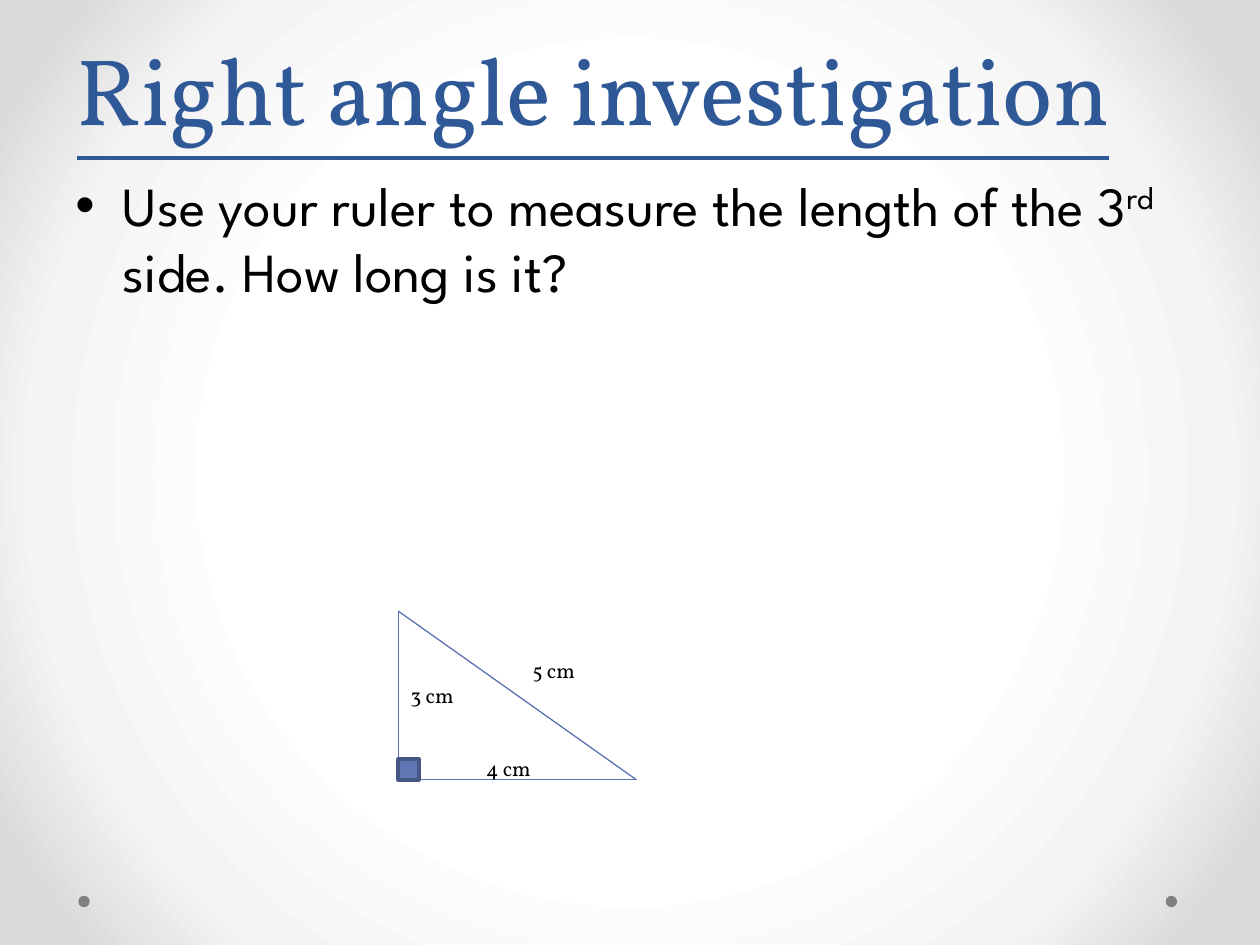
from dataclasses import dataclass

from lxml import etree
from pptx import Presentation
from pptx.dml.color import RGBColor
from pptx.enum.shapes import MSO_CONNECTOR as Connector, MSO_SHAPE as Shape
from pptx.enum.text import MSO_ANCHOR as Anchor
from pptx.oxml import parse_xml
from pptx.oxml.ns import nsdecls, qn
from pptx.util import Cm, Pt


@dataclass(frozen=True)
class Theme:
    title: RGBColor = RGBColor(0x2F, 0x58, 0x97)
    text: RGBColor = RGBColor(0, 0, 0)
    dot: RGBColor = RGBColor(0x80, 0x80, 0x80)
    side: RGBColor = RGBColor(0x5C, 0x72, 0xB2)
    corner: RGBColor = RGBColor(0x60, 0x76, 0xB4)
    corner_line: RGBColor = RGBColor(0x47, 0x57, 0x85)
    glow: tuple = ((50, "FFFFFF"), (76, "F4F4F4"), (92, "DADADA"))
    serif: str = "Vollkorn"
    sans: str = "League Spartan"
    title_size: Pt = Pt(54)
    body_size: Pt = Pt(31.5)
    label_size: Pt = Pt(12)


theme = Theme()


def add_text(page, place, spans, **font_format):
    """Add a one-paragraph text box and return its frame and paragraph."""
    frame = page.shapes.add_textbox(*map(Cm, place)).text_frame
    frame.word_wrap = True
    para = frame.paragraphs[0]
    for words in spans:
        span = para.add_run()
        span.text = words
        color = font_format.get("color", theme.text)
        span.font.color.rgb = color
        for name, value in font_format.items():
            if name != "color":
                setattr(span.font, name, value)
    return frame, para


def add_solid(page, kind, place, color):
    solid = page.shapes.add_shape(kind, *map(Cm, place))
    solid.shadow.inherit = False
    solid.fill.solid()
    solid.fill.fore_color.rgb = color
    solid.line.fill.background()
    return solid


deck = Presentation()
deck.slide_width, deck.slide_height = Cm(25.4), Cm(19.05)
page = deck.slides.add_slide(deck.slide_layouts[6])

# Background: circular glow from the centre
page.background.fill.solid()
solid_fill = page.background._cSld.bg.bgPr.find(qn("a:solidFill"))
stops = "".join(f'<a:gs pos="{at * 1000}"><a:srgbClr val="{color}"/></a:gs>'
                for at, color in theme.glow)
solid_fill.getparent().replace(solid_fill, parse_xml(
    f'<a:gradFill {nsdecls("a")} rotWithShape="1"><a:gsLst>{stops}</a:gsLst>'
    '<a:path path="circle"><a:fillToRect l="50000" t="50000" r="50000" b="50000"/>'
    '</a:path></a:gradFill>'))

# Footer dots
for left in (23.5, 1.58):
    add_solid(page, Shape.OVAL, (left, 18.06, 0.23, 0.23), theme.dot)

# Title
frame, para = add_text(page, (1.3, 0.53, 22.86, 2.51), ["Right angle investigation"],
                       name=theme.serif, size=theme.title_size,
                       color=theme.title, underline=True)
frame.vertical_anchor = Anchor.BOTTOM
para.line_spacing = Pt(58)

# Task
frame, para = add_text(page, (1.27, 3.33, 22.86, 6.2),
                       ["Use your ruler to measure the length of the 3", "rd",
                        " side. How long is it?"],
                       name=theme.sans, size=theme.body_size)
para.space_before = Pt(6.3)
para.runs[1].font._element.set("baseline", "30000")
bullet_format = para._p.get_or_add_pPr()
for name, value in {"marL": Cm(0.96), "indent": -Cm(0.96)}.items():
    bullet_format.set(name, str(value))
etree.SubElement(bullet_format, qn("a:buFont")).set("typeface", "Arial")
etree.SubElement(bullet_format, qn("a:buChar")).set("char", "•")

# Right-angled triangle
left, top, right, bottom = 8.03, 12.32, 12.83, 15.72
apex, corner, tip = (left, top), (left, bottom), (right, bottom)
for start, end in ((apex, corner), (corner, tip), (apex, tip)):
    side = page.shapes.add_connector(Connector.STRAIGHT, *map(Cm, start + end))
    side.line.color.rgb = theme.side
    side.line.width = Pt(0.75)
    etree.SubElement(side._element.spPr, qn("a:effectLst"))

mark = 0.41
right_angle = add_solid(page, Shape.RECTANGLE, (left, bottom - mark, mark, mark),
                        theme.corner)
right_angle.line.color.rgb = theme.corner_line
right_angle.line.width = Pt(2.25)

for label, x, y in (("3 cm", 8.03, 13.64), ("4 cm", 9.55, 15.11), ("5 cm", 10.49, 13.13)):
    add_text(page, (x, y, 1.8, 0.76), [label], name=theme.serif, size=theme.label_size)

deck.save("out.pptx")
